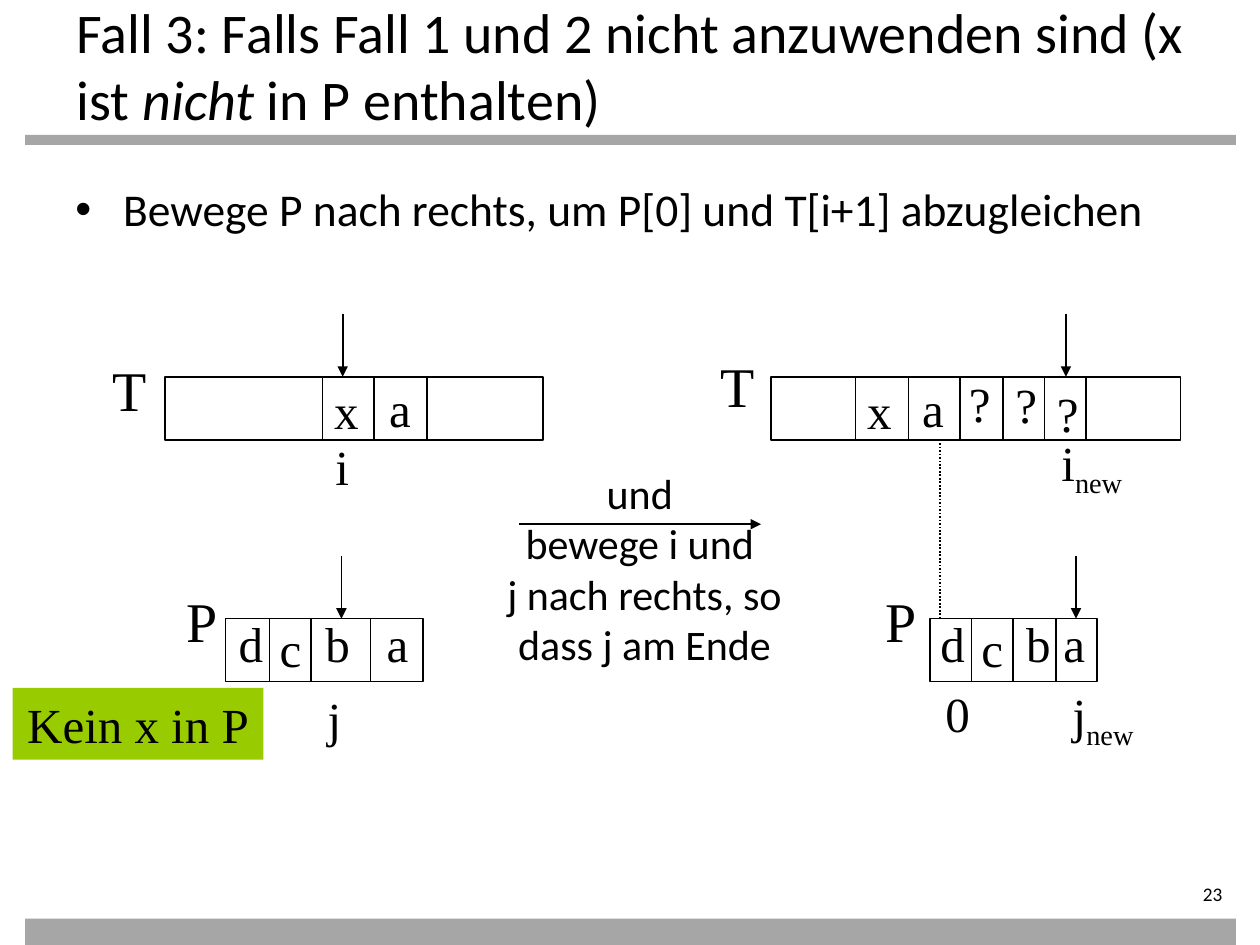
from dataclasses import dataclass

from lxml.etree import SubElement
from pptx import Presentation
from pptx.dml.color import RGBColor
from pptx.enum.dml import MSO_LINE
from pptx.enum.shapes import MSO_CONNECTOR, MSO_SHAPE
from pptx.enum.text import MSO_ANCHOR, MSO_AUTO_SIZE as AutoSize, PP_ALIGN as Align
from pptx.oxml.ns import qn
from pptx.util import Inches, Pt

COLORS = {"ink": "000000", "bar": "A6A6A6", "note": "99CC00"}
SANS, SERIF = "Calibri", "Times New Roman"

# Grid: 100 columns by 75 rows
SLIDE_W, SLIDE_H = Inches(10), Inches(7.5)
COL, ROW = SLIDE_W / 100, SLIDE_H / 75
CELL_H = POINTER_H = 5
TEXT_ROW, PATTERN_ROW = 29.9, 49.1

# Label widths in columns, by what they show
WIDTHS = {"a": 3.7, "c": 3.7, "?": 3.7, "i": 3.1, "j": 3.1, "T": 4.7, "P": 4.5}
PLAIN_W, INDEXED_W = 4, 7.5


@dataclass
class Label:
    text: str
    col: float
    row: float
    sub: str = ""
    size: int = 28


@dataclass
class Tape:
    """A row of cells with a pointer from above and labels around it."""
    col: float
    row: float
    width: float
    dividers: list[float]
    pointer: float
    labels: list[Label]


TAPES = [
    # T before the move
    Tape(13.1, TEXT_ROW, 30, [25.6, 29.7, 33.9], 27.2, [
        Label("T", 7.9, 27.7, size=32), Label("x", 25.5, 29.7),
        Label("a", 29.9, 29.5), Label("i", 25.6, 34.1)]),
    # P before the move
    Tape(17.9, PATTERN_ROW, 15.7, [21.4, 24.7, 29.4], 27.1, [
        Label("P", 13.8, 46.1, size=32), Label("d", 17.9, 48.2),
        Label("c", 21.2, 48.6), Label("b", 24.8, 48.2),
        Label("a", 29.7, 48.2), Label("j", 25, 54.1)]),
    # T after the move
    Tape(61.2, TEXT_ROW, 32.5, [67.9, 72.1, 76.2, 79.6, 82.9, 86.2], 84.6, [
        Label("T", 56.2, 27.4, size=32), Label("x", 67.8, 29.7),
        Label("a", 72.2, 29.5), Label("?", 75.9, 29.1), Label("?", 79.6, 29.2),
        Label("?", 82.9, 29.9), Label("i", 82.9, 34.1, sub="new")]),
    # P after the move
    Tape(73.8, PATTERN_ROW, 13.3, [77.1, 80.4, 83.8], 85.4, [
        Label("P", 69.3, 46.1, size=32), Label("d", 73.6, 48.2),
        Label("c", 76.9, 48.6), Label("b", 80.4, 48.2), Label("a", 83.4, 48.2),
        Label("0", 74, 53.7), Label("j", 83.8, 54.1, sub="new")]),
]


def cells(col: float, row: float, width: float, height: float) -> list[int]:
    return [round(col * COL), round(row * ROW), round(width * COL), round(height * ROW)]


def rgb(name: str) -> RGBColor:
    return RGBColor.from_string(COLORS[name])


def add_box(slide, area: list[int], fill: str = "", outlined: bool = False):
    box = slide.shapes.add_shape(MSO_SHAPE.RECTANGLE, *area)
    box.shadow.inherit = False
    if fill:
        box.fill.solid()
        box.fill.fore_color.rgb = rgb(fill)
    else:
        box.fill.background()
    if outlined:
        box.line.color.rgb = rgb("ink")
        box.line.width = Pt(1)
    else:
        box.line.fill.background()
    return box


def add_line(slide, start: tuple, end: tuple, arrow: bool = False, dotted: bool = False) -> None:
    (x1, y1), (x2, y2) = start, end
    line = slide.shapes.add_connector(
        MSO_CONNECTOR.STRAIGHT,
        round(x1 * COL), round(y1 * ROW), round(x2 * COL), round(y2 * ROW))
    line.line.color.rgb = rgb("ink")
    line.line.width = Pt(1)
    if dotted:
        line.line.dash_style = MSO_LINE.ROUND_DOT
    if arrow:
        SubElement(line.line._get_or_add_ln(), qn("a:tailEnd"), type="triangle")
    SubElement(line._element.spPr, qn("a:effectLst"))


def add_run(paragraph, text: str, size: float, font: str = SANS,
            italic: bool = False, sub: bool = False) -> None:
    run = paragraph.add_run()
    run.text = text
    run.font.size, run.font.name, run.font.italic = Pt(size), font, italic
    run.font.color.rgb = rgb("ink")
    if sub:
        run._r.get_or_add_rPr().set("baseline", "-25000")


def center_frame(shape):
    """Centre a text that keeps its own line breaks."""
    frame = shape.text_frame
    frame.word_wrap = False
    frame.auto_size = AutoSize.SHAPE_TO_FIT_TEXT
    frame.vertical_anchor = MSO_ANCHOR.MIDDLE
    frame.paragraphs[0].alignment = Align.CENTER
    return frame


def add_paragraph_box(slide, area: list[int]):
    frame = slide.shapes.add_textbox(*area).text_frame
    frame.word_wrap = True
    return frame


def add_label(slide, label: Label) -> None:
    width = INDEXED_W if label.sub else WIDTHS.get(label.text, PLAIN_W)
    height = 6.3 if label.size == 32 else 5.7
    frame = center_frame(slide.shapes.add_textbox(*cells(label.col, label.row, width, height)))
    add_run(frame.paragraphs[0], label.text, label.size, SERIF)
    if label.sub:
        add_run(frame.paragraphs[0], label.sub, label.size, SERIF, sub=True)


def add_tape(slide, tape: Tape) -> None:
    add_box(slide, cells(tape.col, tape.row, tape.width, CELL_H), outlined=True)
    for col in tape.dividers:
        add_line(slide, (col, tape.row), (col, tape.row + CELL_H))
    add_line(slide, (tape.pointer, tape.row - POINTER_H), (tape.pointer, tape.row), arrow=True)
    for label in tape.labels:
        add_label(slide, label)


def main() -> None:
    prs = Presentation()
    prs.slide_width, prs.slide_height = SLIDE_W, SLIDE_H
    slide = prs.slides.add_slide(prs.slide_layouts[6])

    # Bars under the title and at the foot
    for row, height in ((10.7, 0.8), (72.9, 2.1)):
        add_box(slide, cells(2, row, 96.1, height), fill="bar")

    # Title
    title = add_paragraph_box(slide, cells(5.1, -0.7, 90, 5.5)).paragraphs[0]
    add_run(title, "Fall 3: Falls Fall 1 und 2 nicht anzuwenden sind (x ist ", 32)
    add_run(title, "nicht", 32, italic=True)
    add_run(title, " in P enthalten)", 32)

    # Bullet
    rule = add_paragraph_box(slide, cells(5, 13.9, 90, 49.6)).paragraphs[0]
    props = rule._p.get_or_add_pPr()
    props.set("marL", str(Inches(0.38)))
    props.set("indent", str(-Inches(0.38)))
    SubElement(props, qn("a:buFont"), typeface="Arial")
    SubElement(props, qn("a:buChar"), char="•")
    add_run(rule, "Bewege P nach rechts, um P[0] und T[i+1] abzugleichen", 26)

    # Text and pattern, before and after the move
    for tape in TAPES:
        add_tape(slide, tape)
    add_line(slide, (74.6, TEXT_ROW + CELL_H), (74.6, PATTERN_ROW), dotted=True)

    # The move itself
    add_line(slide, (41.2, 41.6), (60.4, 41.6), arrow=True)
    move = center_frame(slide.shapes.add_textbox(*cells(38.9, 36.5, 24.5, 17.2)))
    steps = ["und ", "bewege i und ", "j nach rechts, so", "dass j am Ende"]
    for index, step in enumerate(steps):
        paragraph = move.add_paragraph() if index else move.paragraphs[0]
        paragraph.alignment = Align.CENTER
        add_run(paragraph, step, 24)

    # Note on the condition
    note = center_frame(add_box(slide, cells(1, 54.6, 19.9, 5.7), fill="note"))
    add_run(note.paragraphs[0], "Kein x in P", 28, SERIF)

    # Page number
    page = add_paragraph_box(slide, cells(87, 70, 11, 2.2))
    page.margin_left = page.margin_top = page.margin_bottom = 0
    page.paragraphs[0].alignment = Align.RIGHT
    add_run(page.paragraphs[0], "23", 11)

    prs.save("out.pptx")


if __name__ == "__main__":
    main()
